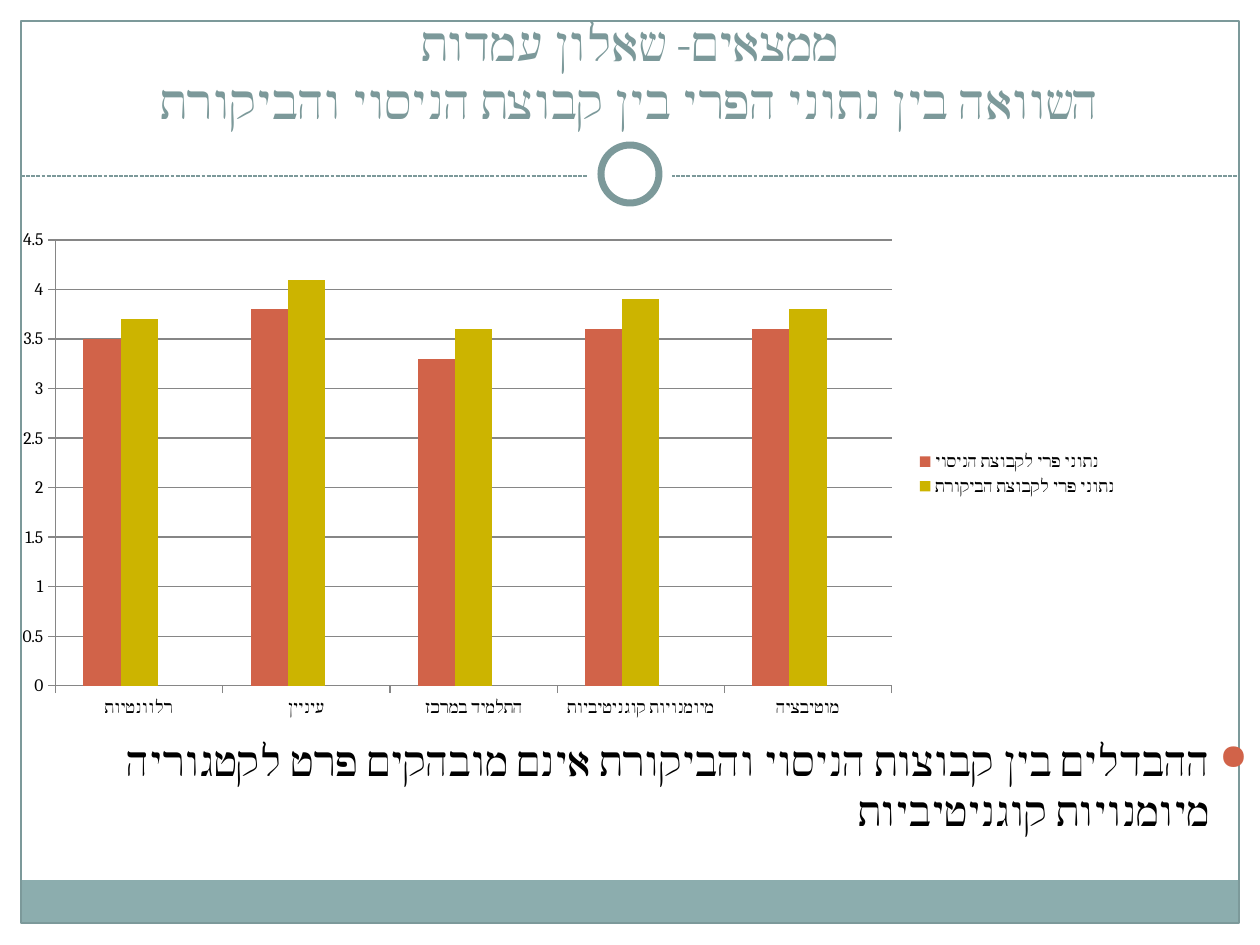
from dataclasses import dataclass
from typing import Optional

from lxml import etree
from pptx import Presentation
from pptx.chart.data import CategoryChartData
from pptx.dml.color import RGBColor
from pptx.enum.chart import XL_CHART_TYPE, XL_LEGEND_POSITION, XL_TICK_MARK
from pptx.enum.dml import MSO_LINE
from pptx.enum.shapes import MSO_CONNECTOR, MSO_SHAPE
from pptx.enum.text import MSO_ANCHOR, PP_ALIGN
from pptx.oxml.ns import qn
from pptx.util import Emu, Pt

PX_PER_INCH = 126
EMU_PER_INCH = 914400
WIDTH, HEIGHT = 1260, 945
FONT = "Cambria"

WHITE = RGBColor(0xFF, 0xFF, 0xFF)
BLACK = RGBColor(0, 0, 0)
TEAL = RGBColor(0x7C, 0x99, 0x9A)
LIGHT_TEAL = RGBColor(0x8C, 0xAD, 0xAE)
RED = RGBColor(0xD1, 0x63, 0x49)
YELLOW = RGBColor(0xCC, 0xB4, 0x00)
GRAY = RGBColor(0x86, 0x86, 0x86)

RECTANGLE, OVAL = MSO_SHAPE.RECTANGLE, MSO_SHAPE.OVAL
STRAIGHT = MSO_CONNECTOR.STRAIGHT
SYSTEM_DASH = MSO_LINE.SQUARE_DOT
TOP, BOTTOM = MSO_ANCHOR.TOP, MSO_ANCHOR.BOTTOM
CENTER, RIGHT = PP_ALIGN.CENTER, PP_ALIGN.RIGHT
CLUSTERED = XL_CHART_TYPE.COLUMN_CLUSTERED
LEGEND_RIGHT = XL_LEGEND_POSITION.RIGHT
OUTSIDE, NO_TICK = XL_TICK_MARK.OUTSIDE, XL_TICK_MARK.NONE


@dataclass(frozen=True)
class Box:
    left: int
    top: int
    width: int
    height: int

    def emu(self) -> tuple:
        return tuple(px(n) for n in (self.left, self.top, self.width, self.height))


@dataclass(frozen=True)
class Panel:
    box: Box
    fill: Optional[RGBColor] = None
    line_width: float = 0
    kind: int = RECTANGLE


@dataclass(frozen=True)
class TextBlock:
    box: Box
    text: str
    size: int
    color: RGBColor
    align: int
    anchor: int


@dataclass(frozen=True)
class Series:
    name: str
    values: tuple
    color: RGBColor


MARGIN = 21
RULE_Y = 176
FRAME = Box(MARGIN, MARGIN, WIDTH - 2 * MARGIN, 902)
BACK_PANELS = [
    Panel(Box(0, 0, WIDTH, 192), WHITE),
    Panel(Box(0, 0, MARGIN, HEIGHT), WHITE),
    Panel(Box(WIDTH - MARGIN, 0, MARGIN, HEIGHT), WHITE),
    Panel(Box(MARGIN, 880, FRAME.width, 43), LIGHT_TEAL),
    Panel(FRAME, line_width=0.75),
]
RING_PANELS = [
    Panel(Box(588, 132, 84, 84), WHITE, kind=OVAL),
    Panel(Box(601, 145, 58, 58), WHITE, 4, OVAL),
]

TITLE = TextBlock(
    Box(42, 31, 1176, 105),
    "ממצאים- שאלון עמדות\vהשוואה בין נתוני הפרי בין קבוצת הניסוי והביקורת",
    28, TEAL, CENTER, BOTTOM)
CONCLUSION = TextBlock(
    Box(49, 728, 1211, 116),
    "ההבדלים בין קבוצות הניסוי והביקורת אינם מובהקים פרט לקטגוריה מיומנויות קוגניטיביות",
    24, BLACK, RIGHT, TOP)

CHART_BOX = Box(0, 220, 1131, 508)
CATEGORIES = ["רלוונטיות", "עיניין", "התלמיד במרכז", "מיומנויות קוגניטיביות", "מוטיבציה"]
SERIES = [
    Series("נתוני פרי לקבוצת הניסוי", (3.5, 3.8, 3.3, 3.6, 3.6), RED),
    Series("נתוני פרי לקבוצת הביקורת", (3.7, 4.1, 3.6, 3.9, 3.8), YELLOW),
    Series("Series 3", (None,) * len(CATEGORIES), LIGHT_TEAL),
]


def px(length: int) -> Emu:
    return Emu(round(length * EMU_PER_INCH / PX_PER_INCH))


def set_all(target, values: dict) -> None:
    for name, value in values.items():
        setattr(target, name, value)


def style_font(font, size: int, color: RGBColor) -> None:
    """Set the font for Latin and for Hebrew letters."""
    set_all(font, {"name": FONT, "size": Pt(size)})
    font.color.rgb = color
    latin = font._element.find(qn("a:latin"))
    hebrew = etree.Element(qn("a:cs"), typeface=FONT)
    latin.addnext(hebrew)


def add_panel(slide, panel: Panel) -> None:
    shape = slide.shapes.add_shape(panel.kind, *panel.box.emu())
    shape.shadow.inherit = False
    if panel.fill is None:
        shape.fill.background()
    else:
        shape.fill.solid()
        shape.fill.fore_color.rgb = panel.fill
    if panel.line_width:
        shape.line.color.rgb = TEAL
        shape.line.width = Pt(panel.line_width)
    else:
        shape.line.fill.background()


def add_rule(slide) -> None:
    ends = (MARGIN, RULE_Y, WIDTH - MARGIN, RULE_Y)
    rule = slide.shapes.add_connector(STRAIGHT, *(px(n) for n in ends))
    rule.line.color.rgb = TEAL
    set_all(rule.line, {"width": Pt(0.75), "dash_style": SYSTEM_DASH})
    etree.SubElement(rule._element.spPr, qn("a:effectLst"))


def add_text(slide, block: TextBlock):
    """Add a right-to-left paragraph and return it."""
    frame = slide.shapes.add_textbox(*block.box.emu()).text_frame
    set_all(frame, {"word_wrap": True, "vertical_anchor": block.anchor})
    paragraph = frame.paragraphs[0]
    paragraph.text = block.text
    paragraph.alignment = block.align
    paragraph._p.get_or_add_pPr().set("rtl", "1")
    for run in paragraph.runs:
        style_font(run.font, block.size, block.color)
    return paragraph


def add_bullet(paragraph) -> None:
    paragraph.space_before = Pt(5)
    properties = paragraph._p.get_or_add_pPr()
    indent = px(38)
    properties.set("marL", str(indent))
    properties.set("indent", str(-indent))
    color = etree.SubElement(properties, qn("a:buClr"))
    etree.SubElement(color, qn("a:srgbClr"), val=str(RED))
    etree.SubElement(properties, qn("a:buSzPct"), val="85000")
    etree.SubElement(properties, qn("a:buChar"), char="●")


def hide_legend_entry(legend, index: int) -> None:
    entry = etree.Element(qn("c:legendEntry"))
    etree.SubElement(entry, qn("c:idx"), val=str(index))
    etree.SubElement(entry, qn("c:delete"), val="1")
    legend._element.find(qn("c:legendPos")).addnext(entry)


def add_attitude_chart(slide) -> None:
    data = CategoryChartData()
    data.categories = CATEGORIES
    for series in SERIES:
        data.add_series(series.name, series.values)
    chart = slide.shapes.add_chart(CLUSTERED, *CHART_BOX.emu(), data).chart
    set_all(chart, {"has_title": False, "has_legend": True})
    style_font(chart.font, 10, BLACK)
    set_all(chart.legend, {"position": LEGEND_RIGHT, "include_in_layout": False})
    hide_legend_entry(chart.legend, len(SERIES) - 1)

    plot = chart.plots[0]
    set_all(plot, {"gap_width": 150, "overlap": 0, "vary_by_categories": False})
    for drawn, series in zip(plot.series, SERIES):
        drawn.format.fill.solid()
        drawn.format.fill.fore_color.rgb = series.color

    values = chart.value_axis
    set_all(values, {"minimum_scale": 0, "maximum_scale": 4.5, "major_unit": 0.5,
                     "has_major_gridlines": True})
    for axis in (values, chart.category_axis):
        set_all(axis, {"major_tick_mark": OUTSIDE, "minor_tick_mark": NO_TICK})
    for lines in (values, chart.category_axis, values.major_gridlines):
        lines.format.line.color.rgb = GRAY
        lines.format.line.width = Pt(0.75)


def main() -> None:
    presentation = Presentation()
    set_all(presentation, {"slide_width": px(WIDTH), "slide_height": px(HEIGHT)})
    slide = presentation.slides.add_slide(presentation.slide_layouts[6])
    for panel in BACK_PANELS:
        add_panel(slide, panel)
    add_rule(slide)
    for panel in RING_PANELS:
        add_panel(slide, panel)
    add_text(slide, TITLE)
    add_bullet(add_text(slide, CONCLUSION))
    add_attitude_chart(slide)
    presentation.save("out.pptx")


if __name__ == "__main__":
    main()
